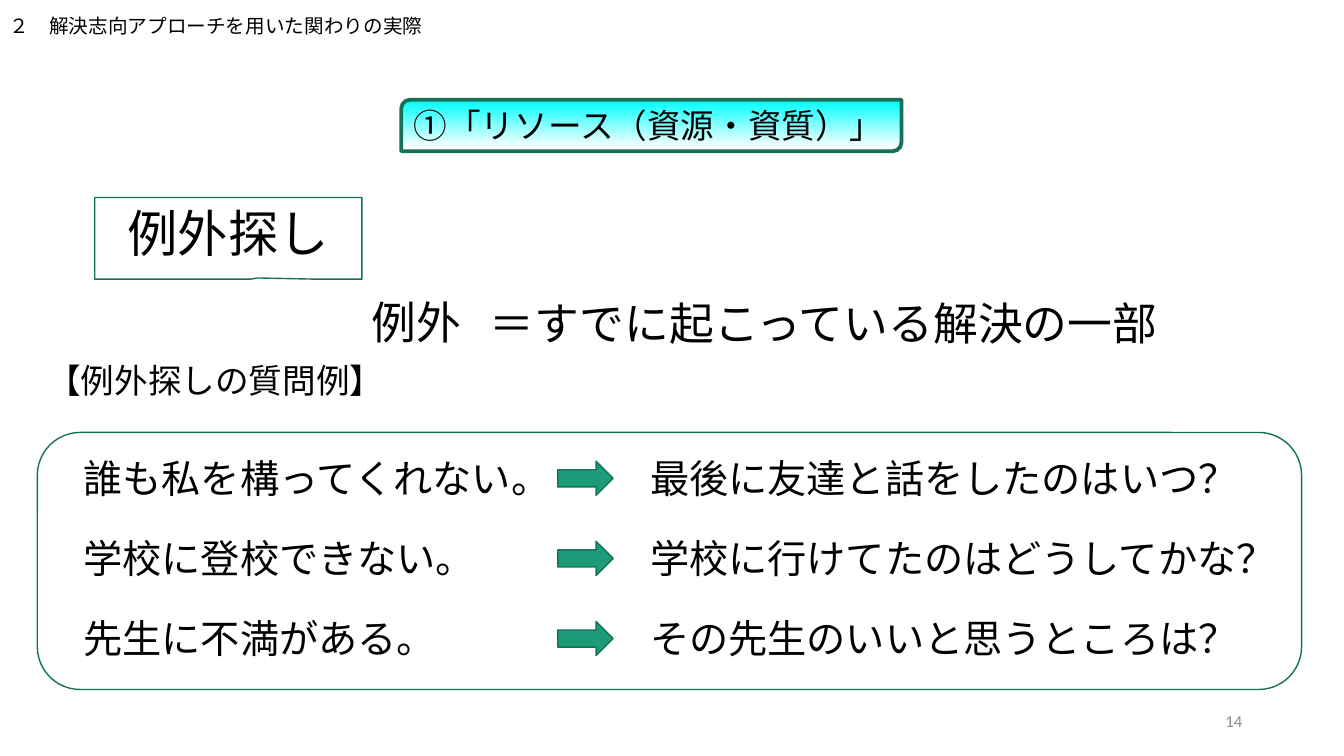
"""Builds the slide on exception-finding questions in the solution-focused approach."""
from lxml import etree
from pptx import Presentation
from pptx.dml.color import RGBColor
from pptx.enum.shapes import MSO_SHAPE
from pptx.enum.text import MSO_ANCHOR, PP_ALIGN
from pptx.oxml.ns import qn
from pptx.util import Inches, Pt

WIDTH, HEIGHT = Inches(13.33), Inches(7.5)
COLUMNS = ROWS = 100
CALLOUT = MSO_SHAPE.RECTANGULAR_CALLOUT
BANNER = MSO_SHAPE.ROUND_2_DIAG_RECTANGLE
PANEL = MSO_SHAPE.ROUNDED_RECTANGLE
ARROW = MSO_SHAPE.RIGHT_ARROW
TOP, MIDDLE = MSO_ANCHOR.TOP, MSO_ANCHOR.MIDDLE
LEFT, CENTER, RIGHT = PP_ALIGN.LEFT, PP_ALIGN.CENTER, PP_ALIGN.RIGHT
JAPANESE, LATIN = "Noto Sans CJK JP", "Calibri"
COLORS = {
    "text": "000000",
    "number": "8C8C8C",
    "outline": "157259",
    "arrow": "1D9A78",
    "banner": "00FFFF",
    "white": "FFFFFF",
}
FIRST_ROW, ROW_STEP = 59.4, 10.6
QUESTIONS = [
    ("誰も私を構ってくれない。", "最後に友達と話をしたのはいつ？"),
    ("学校に登校できない。", "学校に行けてたのはどうしてかな？"),
    ("先生に不満がある。", "その先生のいいと思うところは？"),
]


def color(name):
    """Return the named colour."""
    return RGBColor.from_string(COLORS[name])


def place(column, row, columns, rows):
    """Convert grid units to left, top, width and height."""
    return (
        int(WIDTH * column / COLUMNS),
        int(HEIGHT * row / ROWS),
        int(WIDTH * columns / COLUMNS),
        int(HEIGHT * rows / ROWS),
    )


def write(shape, text, size, font=JAPANESE, ink="text", align=LEFT, anchor=TOP):
    """Put one formatted paragraph into a shape."""
    frame = shape.text_frame
    for name, value in {"word_wrap": True, "vertical_anchor": anchor}.items():
        setattr(frame, name, value)
    paragraph = frame.paragraphs[0]
    paragraph.alignment = align
    run = paragraph.add_run()
    run.text = text
    for name, value in {"size": Pt(size), "name": font}.items():
        setattr(run.font, name, value)
    run.font.color.rgb = color(ink)
    east_asian = etree.SubElement(run.font._element, qn("a:ea"))
    east_asian.set("typeface", JAPANESE)


def add_text(slide, area, text, size, **formats):
    """Add a text box on the grid."""
    write(slide.shapes.add_textbox(*place(*area)), text, size, **formats)


def add_outlined(slide, kind, area, line_width=1, fill=None):
    """Add a preset shape with a green outline and an optional fill."""
    shape = slide.shapes.add_shape(kind, *place(*area))
    shape.shadow.inherit = False
    shape.line.color.rgb = color("outline")
    shape.line.width = Pt(line_width)
    if fill:
        shape.fill.solid()
        shape.fill.fore_color.rgb = color(fill)
    else:
        shape.fill.background()
    return shape


def add_banner(slide, area, text):
    """Add the title banner that fades from cyan to white."""
    banner = add_outlined(slide, BANNER, area, line_width=2.75)
    banner.fill.gradient()
    banner.fill.gradient_angle = 270
    stops = [("banner", 0), ("white", 0.94)]
    for stop, (name, position) in zip(banner.fill.gradient_stops, stops):
        stop.color.rgb = color(name)
        stop.position = position
    write(banner, text, 24, anchor=MIDDLE)


def add_callout(slide, area, text):
    """Add the outlined topic callout."""
    callout = add_outlined(slide, CALLOUT, area)
    for index, value in enumerate((0.108, 0.485)):
        callout.adjustments[index] = value
    write(callout, text, 36, align=CENTER)


def add_question(slide, row, complaint, question):
    """Add a complaint, an arrow and the question that answers it."""
    add_text(slide, (5.48, row, 38, 7.6), complaint, 28)
    add_outlined(slide, ARROW, (41.5, row + 1.6, 4.13, 4.53), fill="arrow")
    add_text(slide, (47.64, row, 49.14, 7.6), question, 28)


def main():
    """Build and save the slide."""
    presentation = Presentation()
    presentation.slide_width, presentation.slide_height = WIDTH, HEIGHT
    slide = presentation.slides.add_slide(presentation.slide_layouts[6])
    add_text(slide, (70.67, 92.67, 22.5, 5.33), "14", 12,
             font=LATIN, ink="number", align=RIGHT, anchor=MIDDLE)
    add_text(slide, (0, 1.2, 33, 4.53),
             "２　解決志向アプローチを用いた関わりの実際", 14, font=LATIN)
    add_banner(slide, (29.86, 13.2, 37.21, 6.8), "①「リソース（資源・資質）」")
    add_callout(slide, (7.05, 26.13, 19.88, 10.8), "例外探し")
    add_text(slide, (26.93, 38.27, 8.85, 8.53), "例外", 32)
    add_text(slide, (35.71, 38.4, 52.66, 8.4), "＝すでに起こっている解決の一部", 32)
    add_text(slide, (2.78, 46.93, 26.7, 7.87), "【例外探しの質問例】", 24)
    for index, (complaint, question) in enumerate(QUESTIONS):
        add_question(slide, FIRST_ROW + index * ROW_STEP, complaint, question)
    add_outlined(slide, PANEL, (2.78, 57.2, 94.07, 34))
    presentation.save("out.pptx")


if __name__ == "__main__":
    main()
